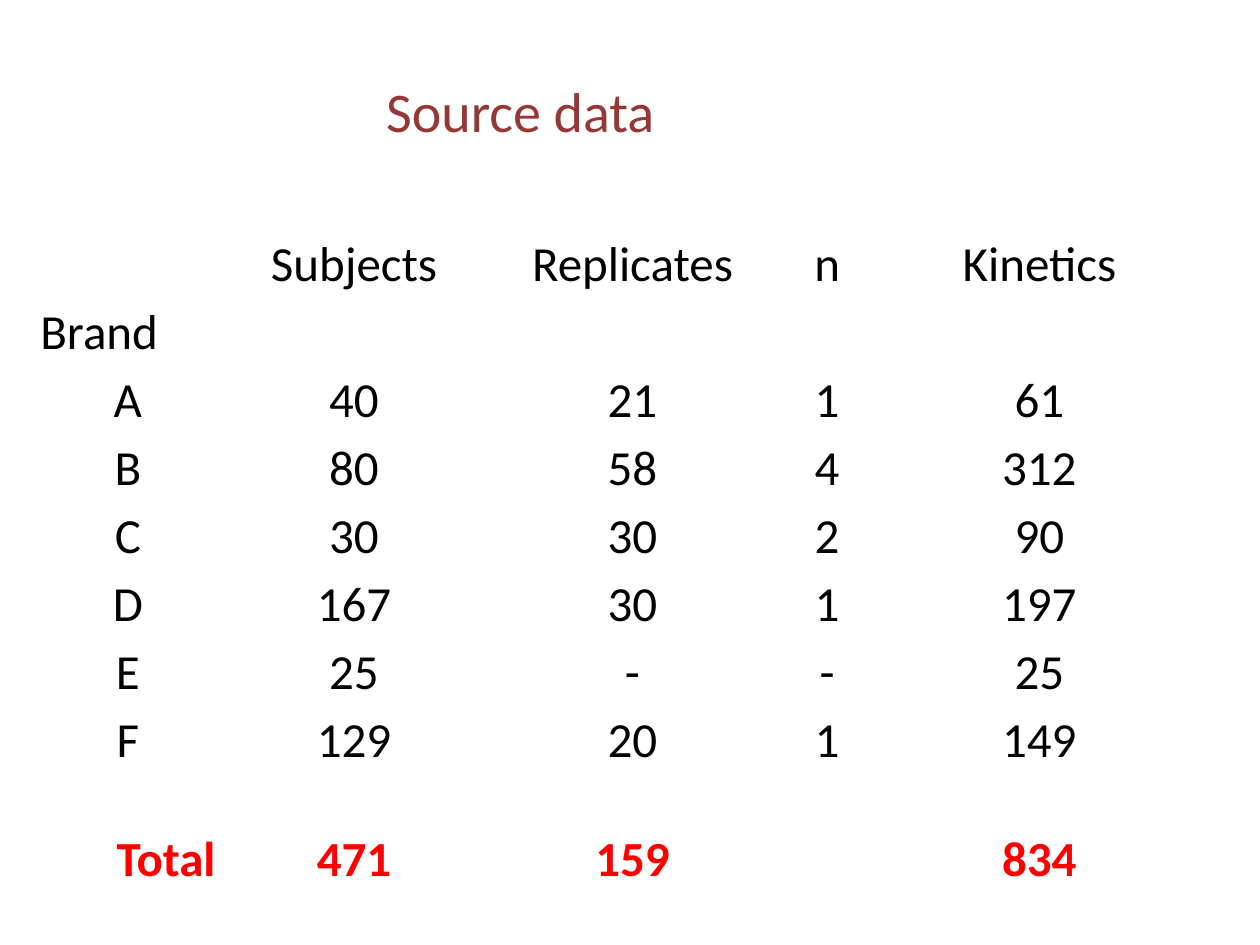
from pptx import Presentation
from pptx.dml.color import RGBColor
from pptx.enum.text import MSO_ANCHOR, PP_ALIGN
from pptx.util import Inches, Pt

WIDTHS = [1.39, 2.2, 2.22, 0.87, 2.5]
ROW = 0.54
LAST = 0.94
ROWS = [
    ["", "Subjects", "Replicates", "n", "Kinetics"],
    ["Brand", "", "", "", ""],
    ["A", "40", "21", "1", "61"],
    ["B", "80", "58", "4", "312"],
    ["C", "30", "30", "2", "90"],
    ["D", "167", "30", "1", "197"],
    ["E", "25", "-", "-", "25"],
    ["F", "129", "20", "1", "149"],
    ["Total", "471", "159", "", "834"],
]
ALIGNS = {"Brand": PP_ALIGN.LEFT, "Total": PP_ALIGN.RIGHT}


def color(code):
    return RGBColor.from_string(code)


def write(frame, text, size, code, align=PP_ALIGN.CENTER, bold=False):
    frame.text = text
    para = frame.paragraphs[0]
    para.alignment = align
    font = para.font
    font.name = "Calibri"
    font.size = Pt(size)
    font.bold = bold
    font.color.rgb = color(code)


def add_title(slide, text):
    box = slide.shapes.add_textbox(
        Inches(1.09), Inches(0.34), Inches(6.08), Inches(1.06))
    frame = box.text_frame
    frame.word_wrap = True
    frame.vertical_anchor = MSO_ANCHOR.MIDDLE
    write(frame, text, 32, "953735")


def fill_cell(cell, text, total):
    cell.fill.background()
    cell.vertical_anchor = MSO_ANCHOR.BOTTOM
    cell.margin_left = cell.margin_right = 0
    cell.margin_top = cell.margin_bottom = 0
    align = ALIGNS.get(text, PP_ALIGN.CENTER)
    write(cell.text_frame, text, 28, "FF0000" if total else "000000",
          align, total)


def add_grid(slide):
    high = ROW * (len(ROWS) - 1) + LAST
    table = slide.shapes.add_table(
        len(ROWS), len(WIDTHS), Inches(0.32), Inches(1.8),
        Inches(sum(WIDTHS)), Inches(high)).table
    table.first_row = table.horz_banding = False
    for col, width in zip(table.columns, WIDTHS):
        col.width = Inches(width)
    for row, texts in zip(table.rows, ROWS):
        total = texts[0] == "Total"
        row.height = Inches(LAST if total else ROW)
        for cell, text in zip(row.cells, texts):
            fill_cell(cell, text, total)


def main():
    deck = Presentation()
    deck.slide_width, deck.slide_height = Inches(10), Inches(7.5)
    slide = deck.slides.add_slide(deck.slide_layouts[6])
    add_title(slide, "Source data")
    add_grid(slide)
    deck.save("out.pptx")


if __name__ == "__main__":
    main()
